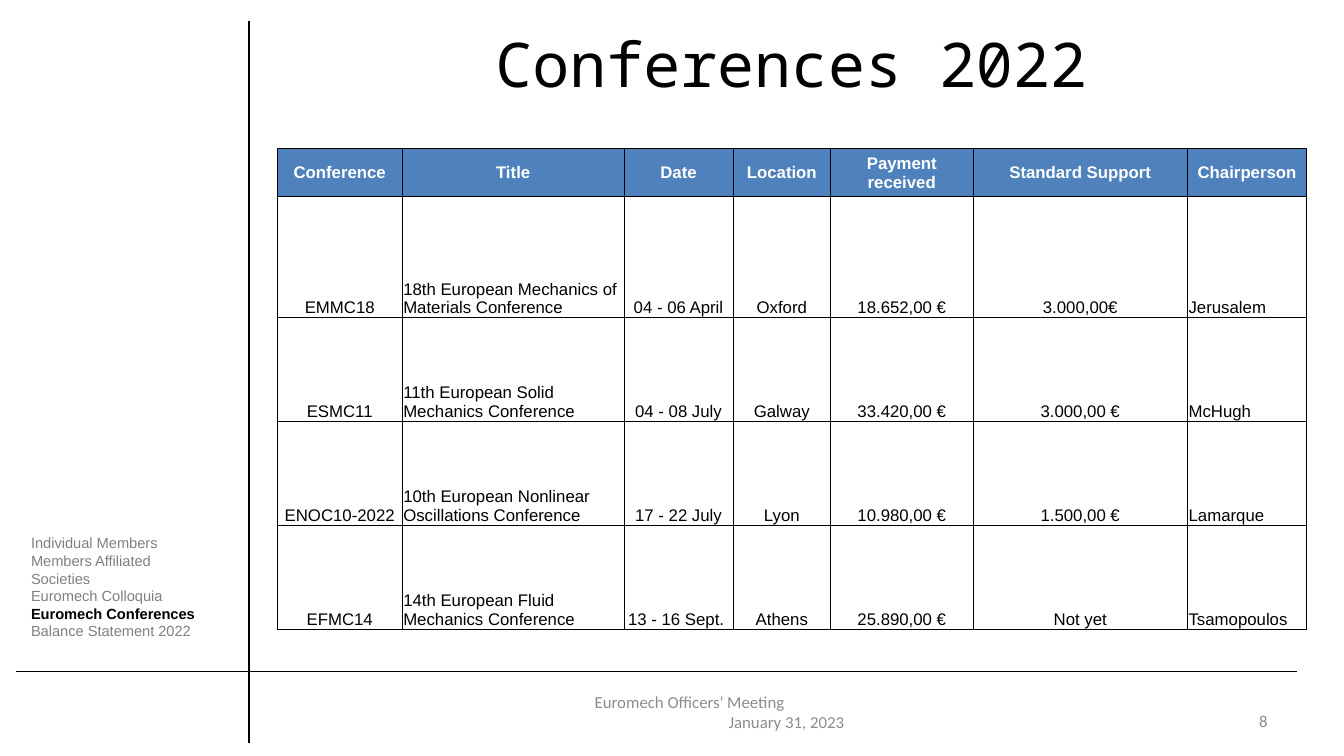
from dataclasses import dataclass

import lxml.etree
import pptx
import pptx.dml.color
import pptx.enum.shapes
import pptx.enum.text
import pptx.oxml.ns
import pptx.util

Inches = pptx.util.Inches
Align = pptx.enum.text.PP_ALIGN
Anchor = pptx.enum.text.MSO_ANCHOR

COLORS = {
    "black": "000000",
    "white": "FFFFFF",
    "header": "4F81BD",
    "muted": "808080",
    "footer": "8C8C8C",
}


@dataclass(frozen=True)
class TextStyle:
    font: str
    size: float
    color: str
    bold: bool = False
    align: Align = Align.LEFT


@dataclass(frozen=True)
class Line:
    text: str
    style: TextStyle
    indent: float = 0


@dataclass(frozen=True)
class TextBox:
    left: float
    top: float
    width: float
    height: float
    anchor: Anchor
    lines: tuple[Line, ...]


@dataclass(frozen=True)
class Rule:
    start: tuple[float, float]
    end: tuple[float, float]


TITLE = TextStyle("Noto Sans Mono", 44, "black", align=Align.CENTER)
AGENDA = TextStyle("Arial", 10.5, "muted")
AGENDA_CURRENT = TextStyle("Arial", 10.5, "black", bold=True)
FOOTER = TextStyle("Calibri", 12, "footer")
PAGE_NUMBER = TextStyle("Calibri", 12, "footer", align=Align.RIGHT)
TABLE_HEADER = TextStyle("Arial", 12, "white", bold=True, align=Align.CENTER)
TABLE_CENTER = TextStyle("Arial", 12, "black", align=Align.CENTER)
TABLE_LEFT = TextStyle("Arial", 12, "black")

RULES = (
    Rule((2.47, 0.21), (2.47, 7.37)),
    Rule((0.16, 6.66), (12.86, 6.66)),
)

AGENDA_ITEMS = (
    "Individual Members",
    "Members Affiliated Societies",
    "Euromech Colloquia",
    "Euromech Conferences",
    "Balance Statement 2022",
)
CURRENT_ITEM = "Euromech Conferences"

TEXT_BOXES = (
    TextBox(3.6, 0, 8.5, 1.25, Anchor.MIDDLE, (Line("Conferences 2022", TITLE),)),
    TextBox(0.21, 5.25, 1.93, 1.16, Anchor.TOP, tuple(
        Line(item, AGENDA_CURRENT if item == CURRENT_ITEM else AGENDA)
        for item in AGENDA_ITEMS
    )),
    TextBox(5.8, 6.86, 3.17, 0.4, Anchor.MIDDLE, (
        Line("Euromech Officers' Meeting", FOOTER),
        Line("January 31, 2023", FOOTER, indent=1.33),
    )),
    TextBox(9.56, 6.95, 3.11, 0.4, Anchor.MIDDLE, (Line("8", PAGE_NUMBER),)),
)

COLUMN_WIDTHS = (1.24, 2.2, 1.08, 0.97, 1.41, 2.13, 1.18)
ROW_HEIGHTS = (0.48, 1.2, 1.03, 1.03, 1.03)
LEFT_ALIGNED_COLUMNS = (1, 6)
CONFERENCES = (
    ("Conference", "Title", "Date", "Location", "Payment received",
     "Standard Support", "Chairperson"),
    ("EMMC18", "18th European Mechanics of Materials Conference", "04 - 06 April",
     "Oxford", "18.652,00 €", "3.000,00€", "Jerusalem"),
    ("ESMC11", "11th European Solid Mechanics Conference", "04 - 08 July",
     "Galway", "33.420,00 €", "3.000,00 €", "McHugh"),
    ("ENOC10-2022", "10th European Nonlinear Oscillations Conference", "17 - 22 July",
     "Lyon", "10.980,00 €", "1.500,00 €", "Lamarque"),
    ("EFMC14", "14th European Fluid Mechanics Conference", "13 - 16 Sept. ",
     "Athens", "25.890,00 €", "Not yet", "Tsamopoulos"),
)


def rgb(name: str) -> pptx.dml.color.RGBColor:
    return pptx.dml.color.RGBColor.from_string(COLORS[name])


def set_attributes(target, values: dict) -> None:
    for name, value in values.items():
        setattr(target, name, value)


def write_line(paragraph, line: Line) -> None:
    style = line.style
    if line.indent:
        paragraph._p.get_or_add_pPr().set("marL", str(Inches(line.indent)))
    paragraph.alignment = style.align
    run = paragraph.add_run()
    run.text = line.text
    set_attributes(run.font, {
        "name": style.font,
        "size": pptx.util.Pt(style.size),
        "bold": style.bold,
    })
    run.font.color.rgb = rgb(style.color)


def add_rule(slide, rule: Rule) -> None:
    connector = slide.shapes.add_connector(
        pptx.enum.shapes.MSO_CONNECTOR.STRAIGHT,
        *(Inches(value) for value in rule.start + rule.end),
    )
    connector.line.color.rgb = rgb("black")
    connector.line.width = pptx.util.Pt(1)
    properties = connector._element.spPr
    lxml.etree.SubElement(properties, pptx.oxml.ns.qn("a:effectLst"))


def add_text_box(slide, box: TextBox) -> None:
    shape = slide.shapes.add_textbox(
        *(Inches(value) for value in (box.left, box.top, box.width, box.height))
    )
    frame = shape.text_frame
    set_attributes(frame, {"word_wrap": True, "vertical_anchor": box.anchor})
    for index, line in enumerate(box.lines):
        write_line(frame.add_paragraph() if index else frame.paragraphs[0], line)


def add_borders(cell) -> None:
    qn = pptx.oxml.ns.qn
    properties = cell._tc.get_or_add_tcPr()
    for side in ("a:lnL", "a:lnR", "a:lnT", "a:lnB"):
        border = lxml.etree.SubElement(properties, qn(side), w=str(pptx.util.Pt(0.5)))
        fill = lxml.etree.SubElement(border, qn("a:solidFill"))
        lxml.etree.SubElement(fill, qn("a:srgbClr"), val=COLORS["black"])


def format_cell(cell, text: str, style: TextStyle, is_header: bool) -> None:
    set_attributes(cell, {
        "margin_left": Inches(0.01),
        "margin_right": Inches(0.01),
        "margin_top": Inches(0.01),
        "margin_bottom": 0,
        "vertical_anchor": Anchor.MIDDLE if is_header else Anchor.BOTTOM,
    })
    add_borders(cell)
    if is_header:
        cell.fill.solid()
        cell.fill.fore_color.rgb = rgb("header")
    else:
        cell.fill.background()
    write_line(cell.text_frame.paragraphs[0], Line(text, style))


def add_conference_table(slide) -> None:
    table = slide.shapes.add_table(
        len(ROW_HEIGHTS), len(COLUMN_WIDTHS), Inches(2.75), Inches(1.47),
        Inches(sum(COLUMN_WIDTHS)), Inches(sum(ROW_HEIGHTS)),
    ).table
    set_attributes(table, {"first_row": False, "horz_banding": False})
    for column, width in zip(table.columns, COLUMN_WIDTHS):
        column.width = Inches(width)
    for row_index, (row, height) in enumerate(zip(table.rows, ROW_HEIGHTS)):
        row.height = Inches(height)
        for column_index, cell in enumerate(row.cells):
            body = TABLE_LEFT if column_index in LEFT_ALIGNED_COLUMNS else TABLE_CENTER
            style = body if row_index else TABLE_HEADER
            format_cell(cell, CONFERENCES[row_index][column_index], style, row_index == 0)


def main() -> None:
    presentation = pptx.Presentation()
    set_attributes(presentation, {"slide_width": Inches(13.33), "slide_height": Inches(7.5)})
    slide = presentation.slides.add_slide(presentation.slide_layouts[6])
    for rule in RULES:
        add_rule(slide, rule)
    for box in TEXT_BOXES:
        add_text_box(slide, box)
    add_conference_table(slide)
    presentation.save("out.pptx")


if __name__ == "__main__":
    main()
